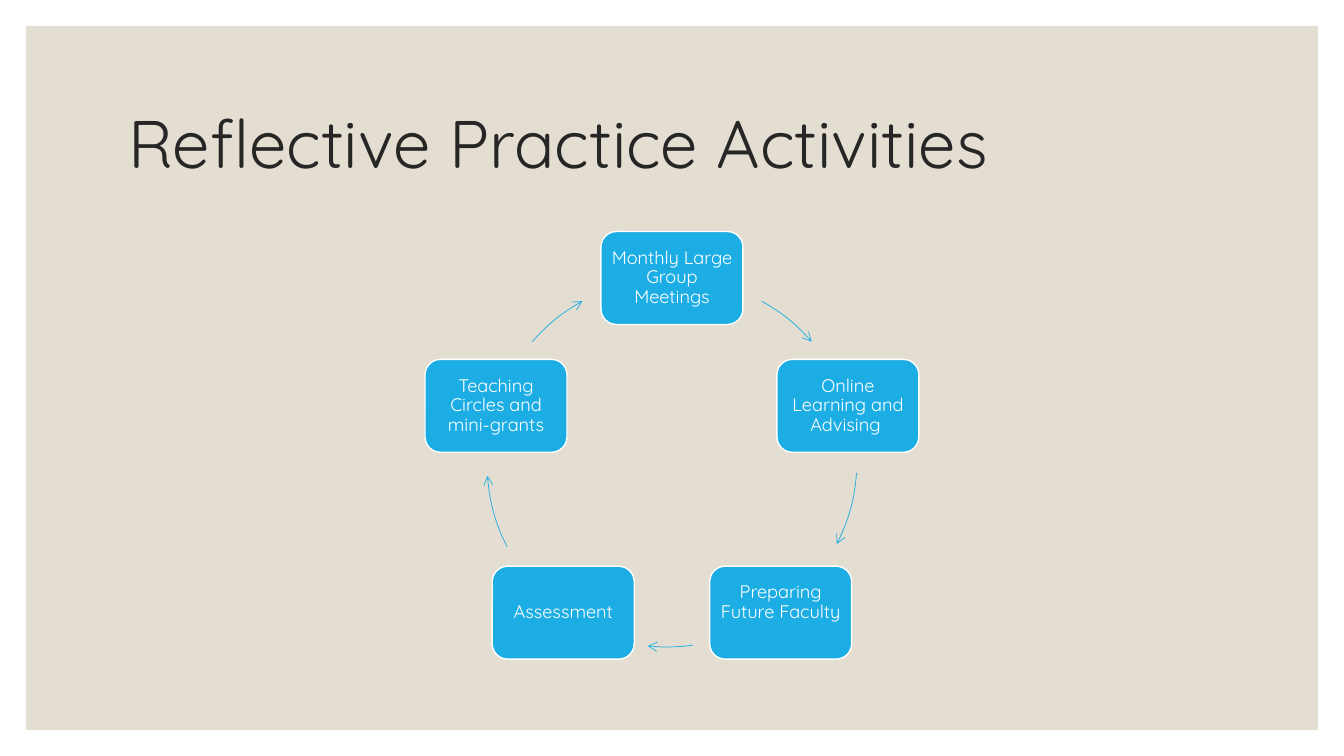
import math
from dataclasses import dataclass

from lxml import etree
from pptx import Presentation, util as u
from pptx.dml.color import RGBColor
from pptx.enum import shapes, text
from pptx.oxml import ns

# Content: activities clockwise from the top, with extra room below the text in px
TITLE = "Reflective Practice Activities"
ACTIVITIES = [
    ("Monthly Large Group Meetings", 0),
    ("Online Learning and Advising ", 0),
    ("Preparing Future Faculty", 20),
    ("Assessment", 0),
    ("Teaching Circles and mini-grants", 0),
]
# Arrows: start and end in degrees clockwise from the top, shift of the circle in px
ARROWS = [
    (29, 49, (0, 0)),
    (94, 117, (0, -3)),
    (172, 186, (-5, -1)),
    (243, 266, (0, 0)),
    (311, 331, (0, 0)),
]


@dataclass(frozen=True)
class Theme:
    font: str = "Quicksand"
    panel: RGBColor = RGBColor(0xE3, 0xDE, 0xD1)
    ink: RGBColor = RGBColor(0x26, 0x26, 0x26)
    accent: RGBColor = RGBColor(0x1C, 0xAD, 0xE4)
    white: RGBColor = RGBColor(0xFF, 0xFF, 0xFF)
    title_size: int = 48
    node_size: int = 13


# Layout in px
SCALE = u.Inches(1) / 100.8
SLIDE_W, SLIDE_H, MARGIN = 1344, 756, 26
CENTER_X, CENTER_Y, RADIUS = 672, 463, 185
NODE_W, NODE_H, INSET = 142, 93, 5

theme = Theme()


def px(n):
    return u.Emu(round(n * SCALE))


def add_shape(s, kind, x, y, w, h):
    sp = s.shapes.add_shape(kind, px(x), px(y), px(w), px(h))
    sp.shadow.inherit = False
    return sp


def fill(sp, color):
    sp.fill.solid()
    sp.fill.fore_color.rgb = color


def outline(sp, color, width):
    sp.line.color.rgb = color
    sp.line.width = u.Pt(width)


def set_text(tf, words, size, color, align):
    tf.word_wrap = True
    tf.auto_size = text.MSO_AUTO_SIZE.NONE
    tf.vertical_anchor = text.MSO_ANCHOR.MIDDLE
    p = tf.paragraphs[0]
    p.text = words
    p.alignment = align
    p.line_spacing = 0.9
    p.font.name = theme.font
    p.font.size = u.Pt(size)
    p.font.color.rgb = color


def add_node(s, words, angle, room_below):
    x = CENTER_X + RADIUS * math.sin(angle) - NODE_W / 2
    y = CENTER_Y - RADIUS * math.cos(angle) - NODE_H / 2
    sp = add_shape(s, shapes.MSO_SHAPE.ROUNDED_RECTANGLE, x, y, NODE_W, NODE_H)
    fill(sp, theme.accent)
    outline(sp, theme.white, 1)
    tf = sp.text_frame
    tf.margin_left = tf.margin_right = tf.margin_top = px(INSET)
    tf.margin_bottom = px(INSET + room_below)
    set_text(tf, words, theme.node_size, theme.white, text.PP_ALIGN.CENTER)


def add_arrow(s, start, end, shift):
    dx, dy = shift
    sp = add_shape(s, shapes.MSO_SHAPE.ARC, CENTER_X - RADIUS + dx,
                   CENTER_Y - RADIUS + dy, 2 * RADIUS, 2 * RADIUS)
    # An arc counts from the right, in units of 60000 per degree over 100000
    for i, degrees in enumerate((start, end)):
        sp.adjustments[i] = (degrees - 90) % 360 * 0.6
    sp.fill.background()
    outline(sp, theme.accent, 0.5)
    etree.SubElement(sp.line._get_or_add_ln(), ns.qn("a:tailEnd"), type="arrow")


def main():
    prs = Presentation()
    prs.slide_width, prs.slide_height = px(SLIDE_W), px(SLIDE_H)
    s = prs.slides.add_slide(prs.slide_layouts[5])

    # Background panel, behind the title
    panel = add_shape(s, shapes.MSO_SHAPE.RECTANGLE, MARGIN, MARGIN,
                      SLIDE_W - 2 * MARGIN, SLIDE_H - 2 * MARGIN)
    fill(panel, theme.panel)
    panel.line.fill.background()
    s.shapes.element.insert(2, panel.element)

    # Title
    title = s.shapes.title
    title.left, title.top, title.width, title.height = map(px, (118, 71, 1109, 151))
    set_text(title.text_frame, TITLE, theme.title_size, theme.ink, text.PP_ALIGN.LEFT)

    # Cycle
    step = 2 * math.pi / len(ACTIVITIES)
    for i, ((words, room_below), arrow) in enumerate(zip(ACTIVITIES, ARROWS)):
        add_node(s, words, i * step, room_below)
        add_arrow(s, *arrow)

    prs.save("out.pptx")


if __name__ == "__main__":
    main()
